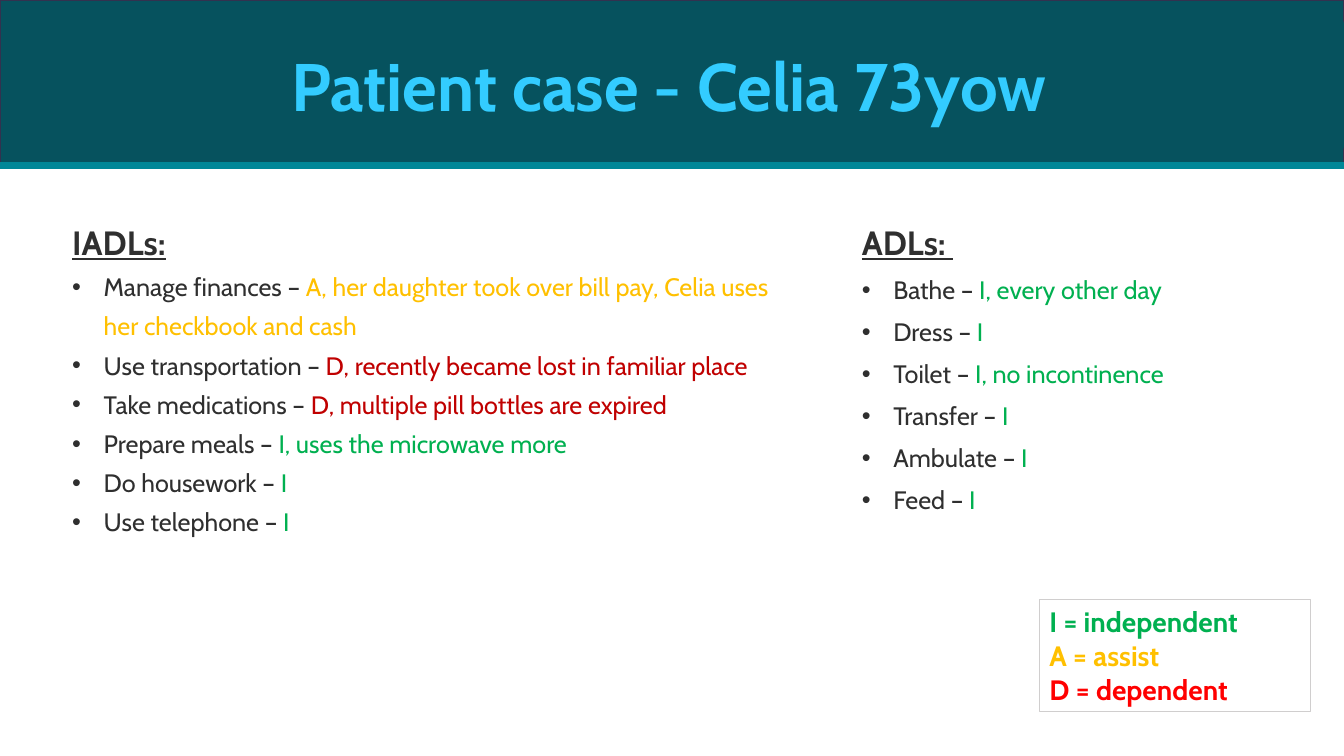
from dataclasses import dataclass
from lxml.etree import SubElement
from pptx import Presentation
from pptx.dml.color import RGBColor
from pptx.enum.shapes import MSO_SHAPE as Shape
from pptx.enum.text import MSO_ANCHOR as Anchor, PP_ALIGN as Align
from pptx.oxml.ns import qn
from pptx.util import Pt


@dataclass(frozen=True)
class Theme:
    font: str = "Cabin"
    title: int = 48
    heading: int = 24
    body: int = 18
    legend: int = 20
    banner: str = "06525E"
    banner_edge: str = "33324F"
    rule: str = "008797"
    title_ink: str = "33CCFF"
    ink: str = "2F2F2F"
    independent: str = "00B050"
    assist: str = "FFC000"
    dependent: str = "C00000"
    legend_dependent: str = "FF0000"
    legend_edge: str = "D0CECE"


def add_text(p, text, *, theme, size, color, bold=False, underline=False):
    r = p.add_run()
    r.text = text
    f = r.font
    f.name, f.size, f.bold, f.underline = theme.font, Pt(size), bold, underline
    f.color.rgb = RGBColor.from_string(color)


class Deck:
    def __init__(self, theme):
        self.theme = theme
        self.prs = Presentation()
        self.prs.slide_width, self.prs.slide_height = Pt(960), Pt(540)
        self.s = self.prs.slides.add_slide(self.prs.slide_layouts[6])

    def box(self, x, y, w, h, line, fill=None, kind=Shape.RECTANGLE, weight=1):
        sp = self.s.shapes.add_shape(kind, Pt(x), Pt(y), Pt(w), Pt(h))
        sp.shadow.inherit = False
        if fill:
            sp.fill.solid()
            sp.fill.fore_color.rgb = RGBColor.from_string(fill)
        else:
            sp.fill.background()
        sp.line.color.rgb = RGBColor.from_string(line)
        sp.line.width = Pt(weight)
        return sp

    def banner(self, text):
        t = self.theme
        self.box(0, 0, 960, 120, t.banner_edge, t.banner)
        sp = self.box(6.5, 1.5, 953.5, 118.5, t.banner, t.banner, Shape.ROUNDED_RECTANGLE)
        sp.text_frame.vertical_anchor = Anchor.MIDDLE
        p = sp.text_frame.paragraphs[0]
        p.alignment = Align.CENTER
        add_text(p, text, theme=t, size=t.title, color=t.title_ink, bold=True)
        self.box(0, 116.5, 960, 3.75, t.rule, t.rule)

    def column(self, x, w, h, heading, items, spacing):
        t = self.theme
        tf = self.s.shapes.add_textbox(Pt(x), Pt(154), Pt(w), Pt(h)).text_frame
        tf.word_wrap = True
        p = tf.paragraphs[0]
        p.line_spacing = Pt(30)
        add_text(p, heading, theme=t, size=t.heading, color=t.ink, bold=True, underline=True)
        for task, status, color in items:
            p = tf.add_paragraph()
            p.line_spacing = Pt(spacing)
            pPr = p._p.get_or_add_pPr()
            pPr.set("marL", str(Pt(22.5)))
            pPr.set("indent", str(-Pt(22.5)))
            SubElement(pPr, qn("a:buFont"), typeface="Arial")
            SubElement(pPr, qn("a:buChar"), char="•")
            add_text(p, f"{task} – ", theme=t, size=t.body, color=t.ink)
            add_text(p, status, theme=t, size=t.body, color=color)

    def legend(self, x, y, w, h, entries):
        t = self.theme
        tf = self.box(x, y, w, h, t.legend_edge, weight=0.75).text_frame
        tf.word_wrap = True
        tf.vertical_anchor = Anchor.TOP
        for i, (text, color) in enumerate(entries):
            p = tf.add_paragraph() if i else tf.paragraphs[0]
            p.alignment = Align.LEFT
            add_text(p, text, theme=t, size=t.legend, color=color, bold=True)


def main():
    t = Theme()
    deck = Deck(t)
    deck.banner("Patient case - Celia 73yow ")
    iadls = [
        ("Manage finances", "A, her daughter took over bill pay, Celia uses her checkbook and cash", t.assist),
        ("Use transportation", "D, recently became lost in familiar place", t.dependent),
        ("Take medications", "D, multiple pill bottles are expired", t.dependent),
        ("Prepare meals", "I, uses the microwave more", t.independent),
        ("Do housework", "I", t.independent),
        ("Use telephone", "I", t.independent),
    ]
    adls = [
        ("Bathe", "I, every other day", t.independent),
        ("Dress", "I", t.independent),
        ("Toilet", "I, no incontinence", t.independent),
        ("Transfer", "I", t.independent),
        ("Ambulate", "I", t.independent),
        ("Feed", "I", t.independent),
    ]
    deck.column(44.5, 540, 232.5, "IADLs:", iadls, 28)
    deck.column(608.5, 307.5, 217, "ADLs: ", adls, 30)
    deck.legend(742.5, 428.5, 193.5, 80, [
        ("I = independent", t.independent),
        ("A = assist", t.assist),
        ("D = dependent", t.legend_dependent),
    ])
    deck.prs.save("out.pptx")


if __name__ == "__main__":
    main()
